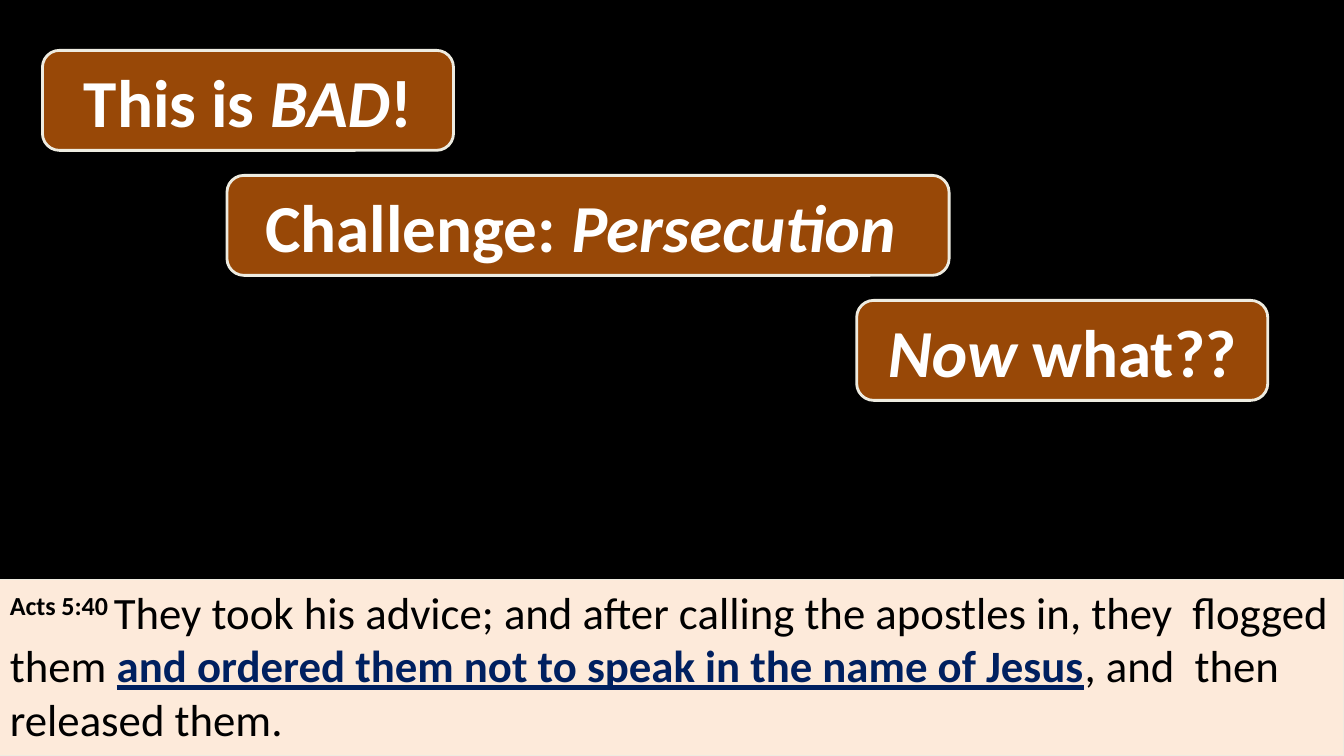
from dataclasses import dataclass

from pptx import Presentation
from pptx.dml.color import RGBColor
from pptx.enum.shapes import MSO_SHAPE
from pptx.enum.text import MSO_ANCHOR, PP_ALIGN
from pptx.util import Cm, Pt


@dataclass(frozen=True)
class Theme:
    font: str = "Calibri"
    background: str = "000000"
    callout: str = "984807"
    callout_text: str = "FFFFFF"
    band: str = "FDEADA"
    outline: str = "EEECE1"
    verse_text: str = "000000"
    emphasis: str = "002060"
    callout_size: int = 48
    verse_size: int = 32


class SlideBuilder:
    def __init__(self, slide, theme):
        self.slide = slide
        self.theme = theme
        fill = slide.background.fill
        fill.solid()
        fill.fore_color.rgb = RGBColor.from_string(theme.background)

    def panel(self, kind, left, top, width, height, color, line_width):
        shape = self.slide.shapes.add_shape(
            kind, Cm(left), Cm(top), Cm(width), Cm(height))
        shape.shadow.inherit = False
        shape.fill.solid()
        shape.fill.fore_color.rgb = RGBColor.from_string(color)
        shape.line.color.rgb = RGBColor.from_string(self.theme.outline)
        shape.line.width = Pt(line_width)
        shape.text_frame.word_wrap = True
        return shape

    def run(self, paragraph, text, size, color, bold=False, italic=False):
        run = paragraph.add_run()
        run.text = text
        run.font.name = self.theme.font
        run.font.size = Pt(size)
        run.font.bold = bold
        run.font.italic = italic
        run.font.color.rgb = RGBColor.from_string(color)
        return run

    def callout(self, left, top, width, parts):
        shape = self.panel(MSO_SHAPE.ROUNDED_RECTANGULAR_CALLOUT,
                           left, top, width, 2.52, self.theme.callout, 2)
        for index, value in enumerate((-0.22, 0.5, 0.17)):
            shape.adjustments[index] = value
        shape.text_frame.vertical_anchor = MSO_ANCHOR.MIDDLE
        paragraph = shape.text_frame.paragraphs[0]
        paragraph.alignment = PP_ALIGN.CENTER
        for text, italic in parts:
            self.run(paragraph, text, self.theme.callout_size,
                     self.theme.callout_text, bold=True, italic=italic)

    def verse(self, top, height, reference, opening, emphasis, closing):
        theme = self.theme
        shape = self.panel(MSO_SHAPE.RECTANGLE, 0, top, 33.87, height,
                           theme.band, 0.75)
        shape.text_frame.vertical_anchor = MSO_ANCHOR.TOP
        paragraph = shape.text_frame.paragraphs[0]
        paragraph.alignment = PP_ALIGN.LEFT
        size, color = theme.verse_size, theme.verse_text
        label = self.run(paragraph, reference, size, color, bold=True)
        label._r.get_or_add_rPr().set("baseline", "30000")
        self.run(paragraph, opening, size, color)
        stressed = self.run(paragraph, emphasis, size, theme.emphasis, bold=True)
        stressed.font.underline = True
        self.run(paragraph, closing, size, color)


def main():
    presentation = Presentation()
    presentation.slide_width = Cm(33.87)
    presentation.slide_height = Cm(19.05)
    slide = presentation.slides.add_slide(presentation.slide_layouts[6])
    builder = SlideBuilder(slide, Theme())

    builder.verse(
        14.6, 4.45, "Acts 5:40 ",
        "They took his advice; and after calling the apostles in, they  flogged them ",
        "and ordered them not to speak in the name of Jesus",
        ", and  then released them.")

    callouts = (
        (1.07, 10.36, (("This is ", False), ("BAD", True), ("!", False))),
        (5.72, 18.2, (("Challenge: ", False), ("Persecution ", True))),
        (21.59, 10.36, (("Now", True), (" what??", False))),
    )
    for row, (left, width, parts) in enumerate(callouts):
        builder.callout(left, 1.27 + 3.15 * row, width, parts)

    presentation.save("out.pptx")


if __name__ == "__main__":
    main()
